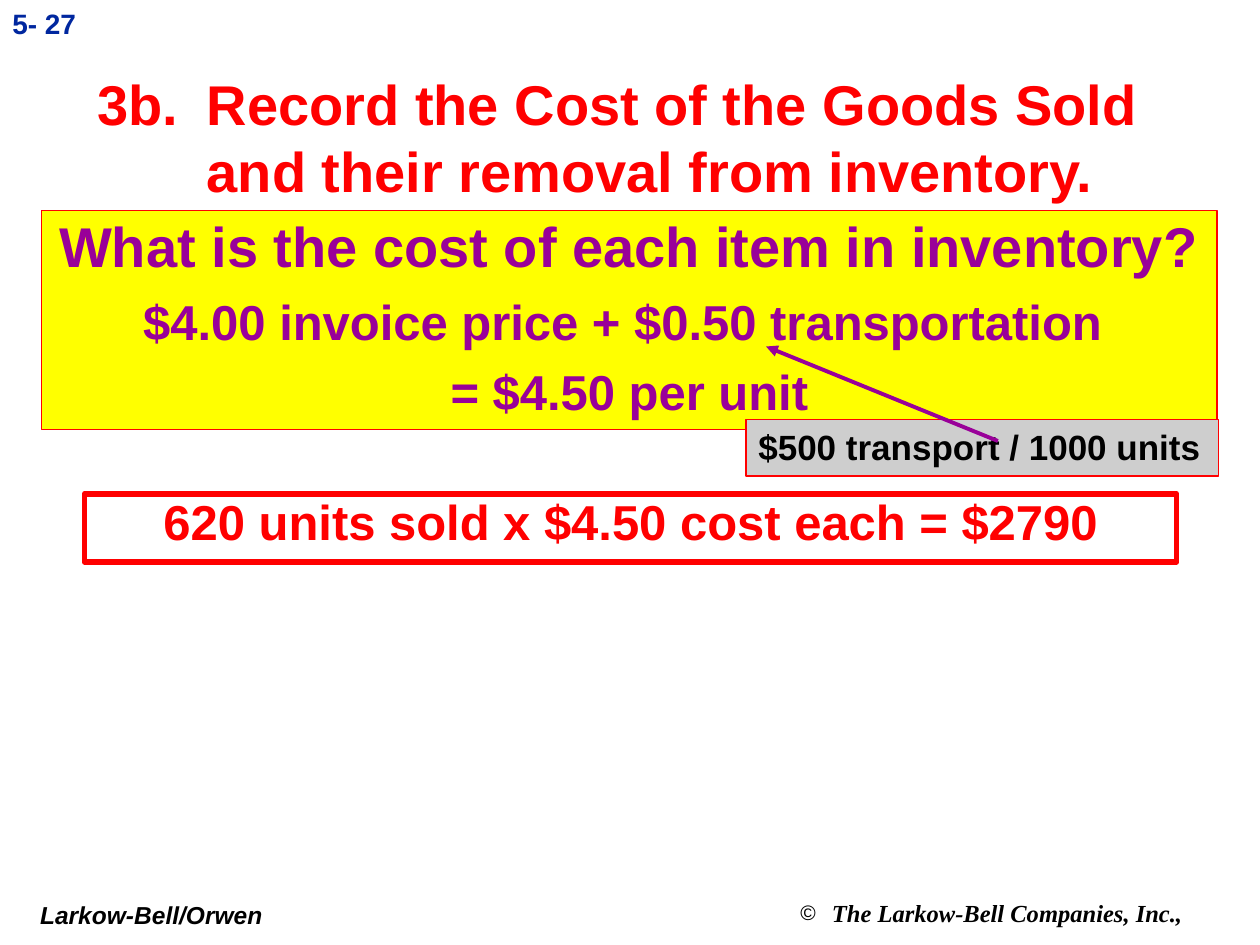
from dataclasses import dataclass

from lxml.etree import SubElement
from pptx import Presentation
from pptx.dml.color import RGBColor
from pptx.enum.shapes import MSO_CONNECTOR, MSO_SHAPE
from pptx.enum.text import MSO_ANCHOR, PP_ALIGN
from pptx.oxml.ns import qn
from pptx.util import Inches, Pt


@dataclass(frozen=True)
class Theme:
    """Colours, fonts and type sizes of the slide."""
    red: RGBColor = RGBColor(0xFF, 0x00, 0x00)
    purple: RGBColor = RGBColor(0x99, 0x00, 0x99)
    yellow: RGBColor = RGBColor(0xFF, 0xFF, 0x00)
    grey: RGBColor = RGBColor(0xCE, 0xCE, 0xCE)
    navy: RGBColor = RGBColor(0x00, 0x27, 0x9F)
    black: RGBColor = RGBColor(0x00, 0x00, 0x00)
    sans: str = "Arial"
    serif: str = "Times New Roman"
    heading: int = 32
    body: int = 28
    note: int = 20
    number: int = 16
    footer: int = 14


THEME = Theme()


def add_run(paragraph, text, size, color, font=THEME.sans, italic=False):
    """Add one bold run to a paragraph."""
    run = paragraph.add_run()
    run.text = text
    run.font.name = font
    run.font.size = Pt(size)
    run.font.bold = True
    run.font.italic = italic
    run.font.color.rgb = color


def set_hanging_indent(paragraph, width):
    """Give a paragraph a hanging indent and return its properties."""
    properties = paragraph._p.get_or_add_pPr()
    properties.set("marL", str(width))
    properties.set("indent", str(-width))
    return properties


def add_label(slide, box):
    """Add a wrapped text box and return its first paragraph."""
    frame = slide.shapes.add_textbox(*map(Inches, box)).text_frame
    frame.word_wrap = True
    return frame.paragraphs[0]


def add_title(slide, box):
    """Place the two-line title with its number hanging at the left."""
    title = slide.shapes.title
    title.left, title.top, title.width, title.height = map(Inches, box)
    frame = title.text_frame
    frame.word_wrap = True
    frame.vertical_anchor = MSO_ANCHOR.MIDDLE
    paragraph = frame.paragraphs[0]
    paragraph.alignment = PP_ALIGN.LEFT
    set_hanging_indent(paragraph, Inches(0.87))
    add_run(paragraph, "3b.\tRecord the Cost of the Goods Sold", THEME.heading, THEME.red)
    paragraph.add_line_break()
    add_run(paragraph, "and their removal from inventory.", THEME.heading, THEME.red)


def add_panel(slide, box, lines, color, fill=None, line_width=1,
              alignment=PP_ALIGN.CENTER, spacing=1.0):
    """Add a red-edged rectangle holding (text, size) lines."""
    panel = slide.shapes.add_shape(MSO_SHAPE.RECTANGLE, *map(Inches, box))
    panel.shadow.inherit = False
    if fill is None:
        panel.fill.background()
    else:
        panel.fill.solid()
        panel.fill.fore_color.rgb = fill
    panel.line.color.rgb = THEME.red
    panel.line.width = Pt(line_width)
    frame = panel.text_frame
    frame.word_wrap = True
    frame.vertical_anchor = MSO_ANCHOR.TOP
    for index, (text, size) in enumerate(lines):
        paragraph = frame.add_paragraph() if index else frame.paragraphs[0]
        paragraph.alignment = alignment
        paragraph.line_spacing = spacing
        paragraph.space_before = Pt(8.5 if index else 0)
        add_run(paragraph, text, size, color)


def add_arrow(slide, start, end):
    """Draw the purple arrow from the transport note to the unit cost."""
    arrow = slide.shapes.add_connector(
        MSO_CONNECTOR.STRAIGHT, *map(Inches, (*start, *end)))
    arrow.line.color.rgb = THEME.purple
    arrow.line.width = Pt(2.25)
    SubElement(arrow.line._get_or_add_ln(), qn("a:tailEnd"), type="triangle")
    SubElement(arrow._element.spPr, qn("a:effectLst"))


def add_page_number(slide, box):
    """Add the chapter and page number."""
    add_run(add_label(slide, box), "5- 27", THEME.number, THEME.navy)


def add_publisher(slide, box):
    """Add the publisher name at the bottom left."""
    add_run(add_label(slide, box), "Larkow-Bell/Orwen", THEME.footer, THEME.black, italic=True)


def add_copyright(slide, box):
    """Add the copyright line, bulleted with its symbol."""
    paragraph = add_label(slide, box)
    paragraph.alignment = PP_ALIGN.CENTER
    properties = set_hanging_indent(paragraph, Inches(0.25))
    SubElement(properties, qn("a:buSzPct"), val="86000")
    SubElement(properties, qn("a:buFont"), typeface=THEME.sans)
    SubElement(properties, qn("a:buChar"), char="©")
    add_run(paragraph, "The Larkow-Bell Companies, Inc.,", THEME.footer,
            THEME.black, THEME.serif, italic=True)


def main():
    """Build and save the slide."""
    presentation = Presentation()
    presentation.slide_width, presentation.slide_height = Inches(10), Inches(7.5)
    slide = presentation.slides.add_slide(presentation.slide_layouts[5])
    add_publisher(slide, (0.22, 7.09, 2, 0.33))
    add_copyright(slide, (5.83, 7.08, 4.08, 0.33))
    add_page_number(slide, (0, 0, 0.83, 0.5))
    add_title(slide, (0.67, 0.5, 8.67, 1.17))
    add_panel(slide, (0.67, 3.92, 8.67, 0.54),
              [("620 units sold x $4.50 cost each = $2790", THEME.body)],
              THEME.red, line_width=3, spacing=0.85)
    add_panel(slide, (0.33, 1.67, 9.33, 1.74),
              [("What is the cost of each item in inventory?", THEME.heading),
               ("$4.00 invoice price + $0.50 transportation ", THEME.body),
               ("= $4.50 per unit", THEME.body)],
              THEME.purple, THEME.yellow, spacing=0.95)
    add_panel(slide, (5.92, 3.33, 3.75, 0.45),
              [("$500 transport / 1000 units", THEME.note)],
              THEME.black, THEME.grey, alignment=PP_ALIGN.LEFT)
    add_arrow(slide, (7.92, 3.5), (6.08, 2.75))
    presentation.save("out.pptx")


if __name__ == "__main__":
    main()
